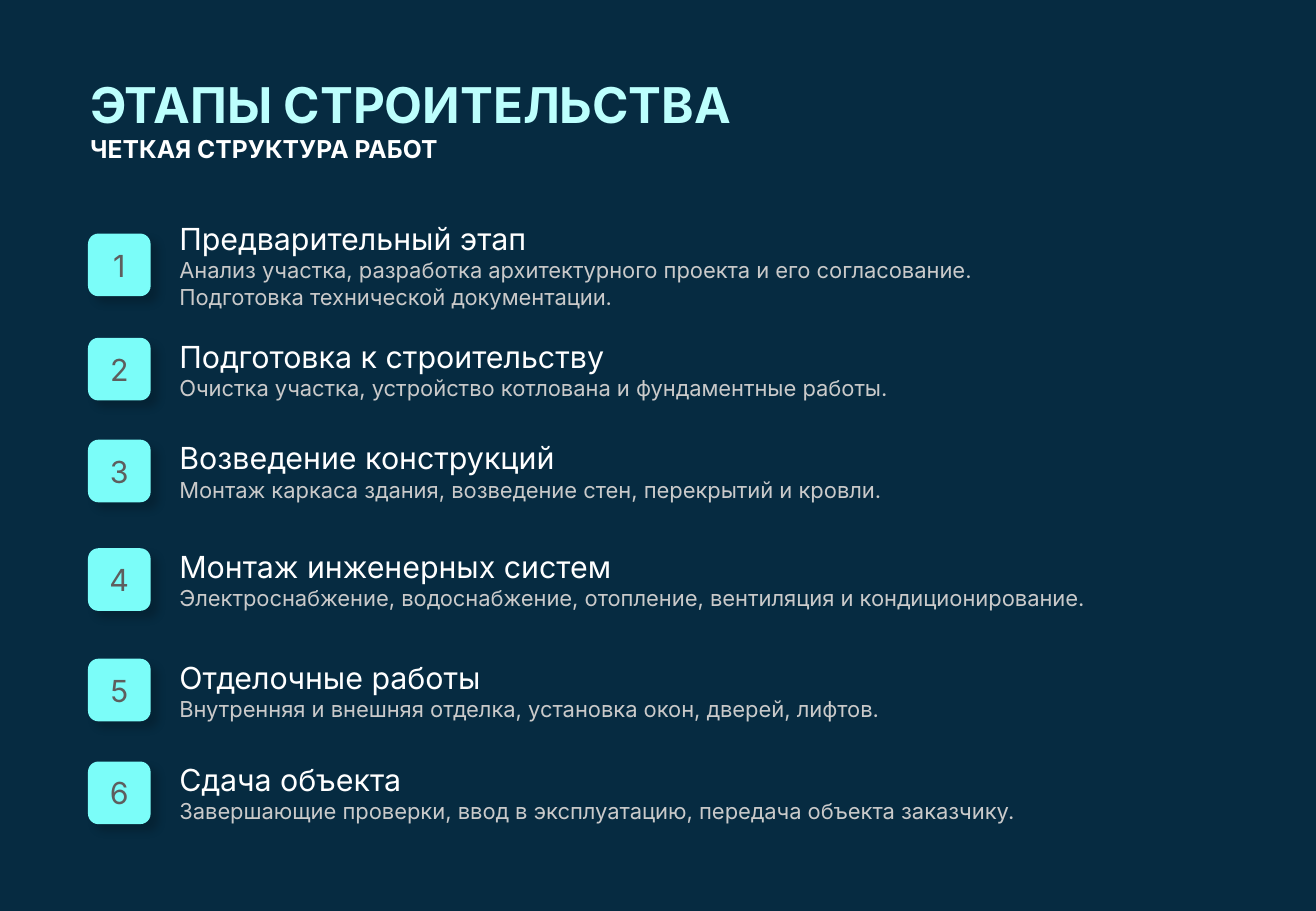
from dataclasses import dataclass

import pptx
import pptx.dml.color
import pptx.enum.shapes
import pptx.enum.text
import pptx.oxml
import pptx.util
from pptx.util import Cm

HEADING = "ЭТАПЫ СТРОИТЕЛЬСТВА"
SUBHEADING = "ЧЕТКАЯ СТРУКТУРА РАБОТ"
STAGES = [
    (5.54, 18.21, "Предварительный этап",
     "Анализ участка, разработка архитектурного проекта и его согласование. "
     "Подготовка технической документации."),
    (7.72, 18.21, "Подготовка к строительству",
     "Очистка участка, устройство котлована и фундаментные работы."),
    (9.85, 18.21, "Возведение конструкций",
     "Монтаж каркаса здания, возведение стен, перекрытий и кровли."),
    (12.12, 20.5, "Монтаж инженерных систем",
     "Электроснабжение, водоснабжение, отопление, вентиляция и кондиционирование."),
    (14.43, 18.21, "Отделочные работы",
     "Внутренняя и внешняя отделка, установка окон, дверей, лифтов."),
    (16.58, 18.21, "Сдача объекта",
     "Завершающие проверки, ввод в эксплуатацию, передача объекта заказчику."),
]


@dataclass(frozen=True)
class Theme:
    font: str = "Inter"
    background: str = "062B41"
    heading: str = "BCFFFD"
    light: str = "FFFFFF"
    muted: str = "CACACA"
    badge: str = "7BFDF9"
    number: str = "5E5E5E"
    heading_size: float = 29.2
    subheading_size: float = 14.6
    stage_size: float = 18
    detail_size: float = 13


THEME = Theme()
BADGE_LEFT, BADGE_SIZE = 1.84, 1.31
STAGE_LEFT, STAGE_HEIGHT = 3.5, 2.13

SHADOW = (
    '<a:effectLst xmlns:a="http://schemas.openxmlformats.org/drawingml/2006/main">'
    '<a:outerShdw blurRad="63500" dist="76200" dir="2580000" algn="tl" rotWithShape="0">'
    '<a:srgbClr val="000000"><a:alpha val="18000"/></a:srgbClr>'
    '</a:outerShdw></a:effectLst>'
)


def rgb(color):
    return pptx.dml.color.RGBColor.from_string(color)


def write(frame, lines, align=pptx.enum.text.PP_ALIGN.LEFT):
    frame.word_wrap = True
    frame.auto_size = pptx.enum.text.MSO_AUTO_SIZE.NONE
    frame.vertical_anchor = pptx.enum.text.MSO_ANCHOR.MIDDLE
    for index, (text, size, color, bold) in enumerate(lines):
        paragraph = frame.add_paragraph() if index else frame.paragraphs[0]
        paragraph.text = text
        paragraph.alignment = align
        paragraph.line_spacing = 1.0
        paragraph.space_before = pptx.util.Pt(0)
        paragraph.font.name = THEME.font
        paragraph.font.size = pptx.util.Pt(size)
        paragraph.font.bold = bold
        paragraph.font.color.rgb = rgb(color)


def add_stage(slide, number, center, width, name, detail):
    stage = slide.shapes.add_group_shape()
    badge = stage.shapes.add_shape(
        pptx.enum.shapes.MSO_SHAPE.ROUNDED_RECTANGLE,
        Cm(BADGE_LEFT), Cm(center - BADGE_SIZE / 2), Cm(BADGE_SIZE), Cm(BADGE_SIZE))
    badge.fill.solid()
    badge.fill.fore_color.rgb = rgb(THEME.badge)
    badge.line.fill.background()
    badge._element.spPr.append(pptx.oxml.parse_xml(SHADOW))
    write(badge.text_frame, [(str(number), THEME.stage_size, THEME.number, False)],
          pptx.enum.text.PP_ALIGN.CENTER)

    description = stage.shapes.add_textbox(
        Cm(STAGE_LEFT), Cm(center - STAGE_HEIGHT / 2), Cm(width), Cm(STAGE_HEIGHT))
    write(description.text_frame, [
        (name, THEME.stage_size, THEME.light, False),
        (detail, THEME.detail_size, THEME.muted, False),
    ])


def main():
    deck = pptx.Presentation()
    deck.slide_width, deck.slide_height = Cm(27.51), Cm(19.05)
    slide = deck.slides.add_slide(deck.slide_layouts.get_by_name("Title Only"))
    slide.background.fill.solid()
    slide.background.fill.fore_color.rgb = rgb(THEME.background)

    title = slide.shapes.title
    title.left, title.top, title.width, title.height = Cm(1.63), Cm(1.42), Cm(23.04), Cm(2.13)
    write(title.text_frame, [
        (HEADING, THEME.heading_size, THEME.heading, True),
        (SUBHEADING, THEME.subheading_size, THEME.light, True),
    ])
    for number, stage in enumerate(STAGES, start=1):
        add_stage(slide, number, *stage)
    deck.save("out.pptx")


if __name__ == "__main__":
    main()
